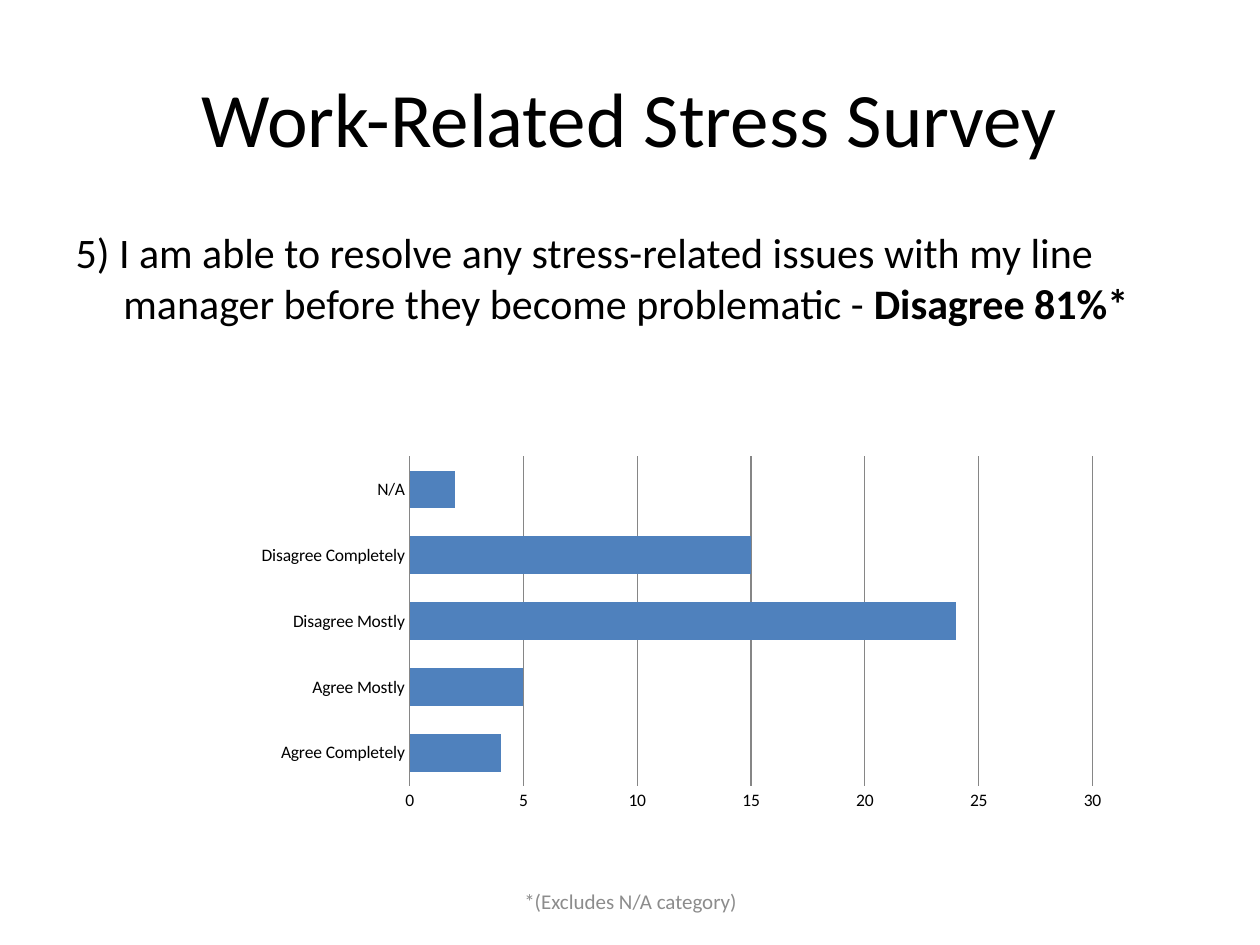
from lxml.etree import SubElement
from pptx import Presentation
from pptx.chart.data import CategoryChartData
from pptx.dml.color import RGBColor
from pptx.enum.chart import XL_CHART_TYPE, XL_TICK_MARK
from pptx.enum.text import MSO_ANCHOR, MSO_AUTO_SIZE, PP_ALIGN
from pptx.oxml.ns import qn
from pptx.util import Pt

PX = 9144
FONT = "Calibri"
COLORS = {"text": "000000", "note": "8C8C8C", "bar": "4F81BD", "grid": "868686"}
ANSWERS = {
    "Agree Completely": 4,
    "Agree Mostly": 5,
    "Disagree Mostly": 24,
    "Disagree Completely": 15,
    "N/A": 2,
}


def color(name):
    return RGBColor.from_string(COLORS[name])


def place(shape, box):
    shape.left, shape.top, shape.width, shape.height = (n * PX for n in box)


def write_text(shape, *parts, size, fill="text", align=PP_ALIGN.LEFT,
               anchor=MSO_ANCHOR.TOP, bold_last=False):
    frame = shape.text_frame
    frame.word_wrap = True
    frame.auto_size = MSO_AUTO_SIZE.NONE
    frame.vertical_anchor = anchor
    paragraph = frame.paragraphs[0]
    paragraph.alignment = align
    for part in parts:
        run = paragraph.add_run()
        run.text = part
        run.font.name = FONT
        run.font.size = Pt(size)
        run.font.bold = bold_last and part == parts[-1]
        run.font.color.rgb = color(fill)
    return paragraph


def add_title(slide, box):
    title = slide.shapes.title
    place(title, box)
    write_text(title, "Work-Related Stress Survey", size=44,
               align=PP_ALIGN.CENTER, anchor=MSO_ANCHOR.MIDDLE)


def add_question(slide, box):
    body = slide.placeholders[1]
    place(body, box)
    paragraph = write_text(
        body,
        "5) I am able to resolve any stress-related issues with my line "
        "manager before they become problematic - ",
        "Disagree 81%*",
        size=24, bold_last=True)
    properties = paragraph._p.get_or_add_pPr()
    properties.set("marL", str(38 * PX))
    properties.set("indent", str(-38 * PX))
    SubElement(properties, qn("a:buNone"))


def set_plot_area(chart, **fractions):
    plot_area = chart._chartSpace.chart.plotArea
    layout = plot_area.find(qn("c:layout"))
    if layout is None:
        layout = SubElement(plot_area, qn("c:layout"))
        plot_area.insert(0, layout)
    manual = SubElement(layout, qn("c:manualLayout"))
    settings = {"layoutTarget": "inner", "xMode": "edge", "yMode": "edge", **fractions}
    for name, value in settings.items():
        SubElement(manual, qn(f"c:{name}")).set("val", str(value))


def add_answer_chart(slide, box):
    data = CategoryChartData()
    data.categories = list(ANSWERS)
    data.add_series("Series 1", list(ANSWERS.values()))
    chart = slide.shapes.add_chart(
        XL_CHART_TYPE.BAR_CLUSTERED, *(n * PX for n in box), data).chart
    chart.has_legend = False
    chart.has_title = False
    chart.font.name = FONT
    chart.font.size = Pt(10)
    chart.font.color.rgb = color("text")
    set_plot_area(chart, x=0.28, y=0.03, w=0.68, h=0.76)

    plot = chart.plots[0]
    plot.vary_by_categories = False
    plot.gap_width = 75
    plot.overlap = -25
    bars = plot.series[0].format.fill
    bars.solid()
    bars.fore_color.rgb = color("bar")

    for axis in (chart.category_axis, chart.value_axis):
        axis.major_tick_mark = XL_TICK_MARK.NONE
        axis.minor_tick_mark = XL_TICK_MARK.NONE
    chart.category_axis.format.line.color.rgb = color("grid")
    values = chart.value_axis
    values.minimum_scale, values.maximum_scale, values.major_unit = 0, 30, 5
    values.format.line.fill.background()
    values.has_major_gridlines = True
    values.major_gridlines.format.line.color.rgb = color("grid")


def add_footnote(slide, box):
    note = slide.shapes.add_textbox(*(n * PX for n in box))
    write_text(note, "*(Excludes N/A category)", size=12, fill="note",
               align=PP_ALIGN.CENTER, anchor=MSO_ANCHOR.MIDDLE)


def main():
    presentation = Presentation()
    presentation.slide_width = 1000 * PX
    presentation.slide_height = 750 * PX
    slide = presentation.slides.add_slide(presentation.slide_layouts[1])
    add_title(slide, (50, 30, 900, 125))
    add_question(slide, (50, 175, 900, 495))
    add_answer_chart(slide, (102, 352, 797, 344))
    add_footnote(slide, (342, 695, 317, 40))
    presentation.save("out.pptx")


if __name__ == "__main__":
    main()
